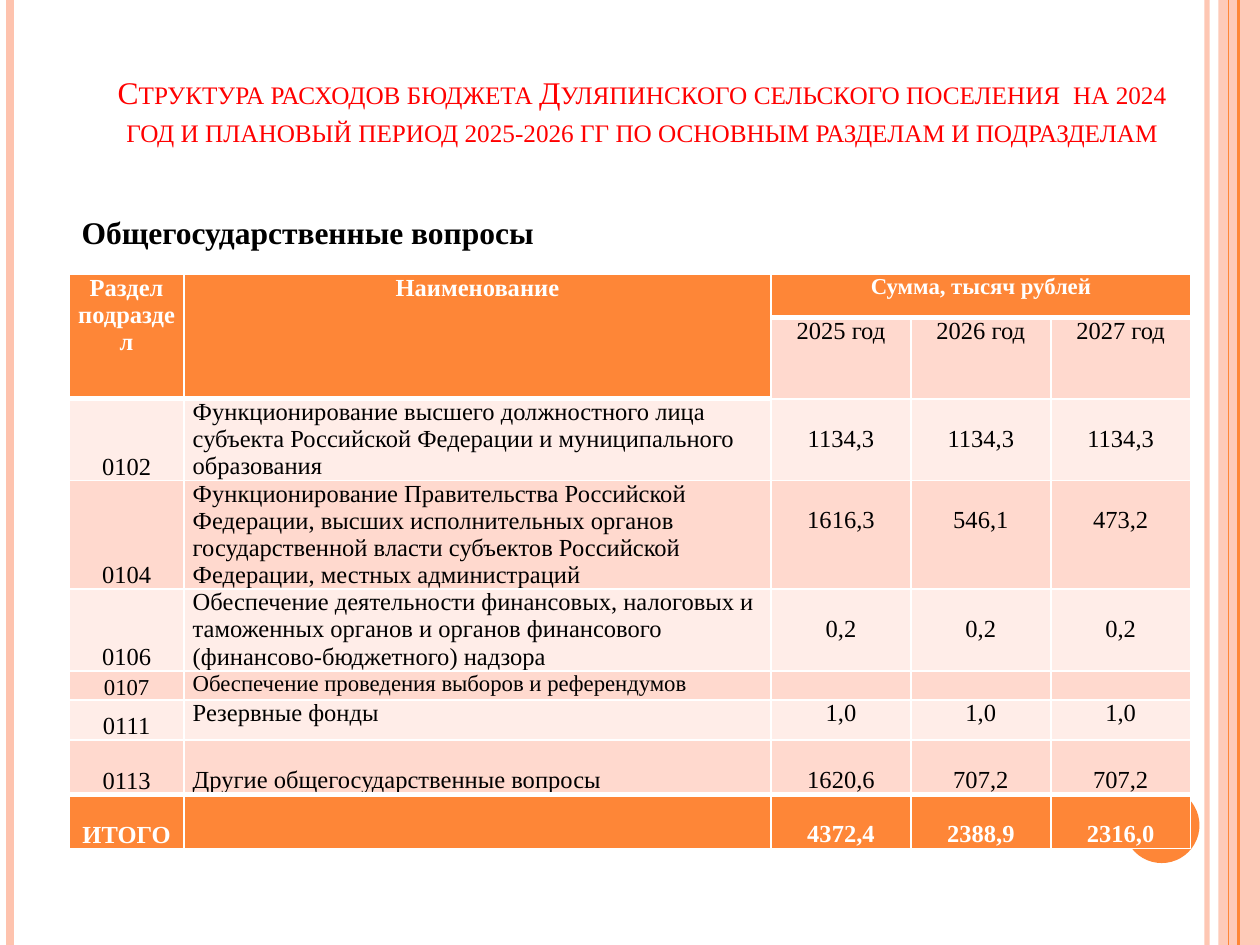
import pptx
import pptx.util
import pptx.dml.color
import pptx.enum.shapes
import pptx.enum.text
import pptx.oxml.ns
from lxml import etree

Inches, Pt = pptx.util.Inches, pptx.util.Pt
ALIGN, ANCHOR = pptx.enum.text.PP_ALIGN, pptx.enum.text.MSO_ANCHOR
SHAPE = pptx.enum.shapes.MSO_SHAPE
qn = pptx.oxml.ns.qn

THEME = {
    "font": "Times New Roman", "title": 18, "cell": 14, "small": 13,
    "orange": "FE8637", "peach": "FEC3AE", "dark_band": "FFD9CE", "light_band": "FFEDE8",
    "red": "FF0000", "black": "000000", "white": "FFFFFF",
}

TITLE = ("Структура расходов бюджета Дуляпинского сельского поселения  на 2024 год "
         "и плановый период 2025-2026 гг по основным разделам и подразделам")
SUBTITLE = "Общегосударственные вопросы"
ROWS = [
    ("Раздел подраздел", "Наименование", "Сумма, тысяч рублей", "", ""),
    ("", "", "2025 год", "2026 год", "2027 год"),
    ("0102", "Функционирование высшего должностного лица субъекта Российской Федерации "
     "и муниципального образования", "1134,3", "1134,3", "1134,3"),
    ("0104", "Функционирование Правительства Российской Федерации, высших исполнительных "
     "органов государственной власти субъектов Российской Федерации, местных администраций",
     "1616,3", "546,1", "473,2"),
    ("0106", "Обеспечение деятельности финансовых, налоговых и таможенных органов и органов "
     "финансового (финансово-бюджетного) надзора", "0,2", "0,2", "0,2"),
    ("0107", "Обеспечение проведения выборов и референдумов", "", "", ""),
    ("0111", "Резервные фонды", "1,0", "1,0", "1,0"),
    ("0113", "Другие общегосударственные вопросы", "1620,6", "707,2", "707,2"),
    ("ИТОГО", "", "4372,4", "2388,9", "2316,0"),
]
COLUMN_WIDTHS = [0.91, 4.66, 1.11, 1.11, 1.11]
ROW_HEIGHTS = [0.34, 0.63, 0.65, 0.86, 0.65, 0.23, 0.32, 0.43, 0.43]
MERGES = [((0, 0), (1, 0)), ((0, 1), (1, 1)), ((0, 2), (0, 4))]
TOTAL_ROW = len(ROWS) - 1
LOWERED_ROWS = {2, 3, 4, 7, 8}  # values sit one line below the cell top
LINE_DROP = 0.21
SMALL_CELLS = {(0, 2)} | {(5, column) for column in range(5)}

# x, width in points, colour, opacity in percent
RULES = [(9.58, 3, "peach", 93), (0.08, 4.5, "peach", 100),
         (9.83, 1.5, "orange", 100), (9.75, 0.75, "orange", 100)]


def color(name):
    return pptx.dml.color.RGBColor.from_string(THEME[name])


def set_opacity(parent, percent):
    for fill_color in parent.iter(qn("a:srgbClr")):
        etree.SubElement(fill_color, qn("a:alpha"), val=str(percent * 1000))


def add_rule(page, x, width, name, opacity):
    line = page.shapes.add_connector(pptx.enum.shapes.MSO_CONNECTOR.STRAIGHT,
                                     Inches(x), 0, Inches(x), Inches(7.5))
    line.line.color.rgb = color(name)
    line.line.width = Pt(width)
    properties = line._element.spPr
    if opacity < 100:
        set_opacity(properties, opacity)
    etree.SubElement(properties, qn("a:effectLst"))


def add_solid(page, kind, name, left, top, width, height):
    shape = page.shapes.add_shape(kind, Inches(left), Inches(top), Inches(width), Inches(height))
    shape.shadow.inherit = False
    shape.fill.solid()
    shape.fill.fore_color.rgb = color(name)
    shape.line.fill.background()
    return shape


def write(para, text, size, name, bold=False, align=ALIGN.LEFT):
    para.alignment = align
    span = para.add_run()
    span.text = text
    span.font.name = THEME["font"]
    span.font.size = Pt(size)
    span.font.bold = bold
    span.font.color.rgb = color(name)
    return span


def edge_weight(edge, column):
    """Points of the horizontal border above row number edge."""
    heavy = edge in (1, TOTAL_ROW) or (edge == 2 and column < 2)
    return 3 if heavy else 1


def set_borders(cell, row, column):
    weights = {"a:lnL": 1, "a:lnR": 1,
               "a:lnT": edge_weight(row, column), "a:lnB": edge_weight(row + 1, column)}
    properties = cell._tc.get_or_add_tcPr()
    for tag, weight in weights.items():
        line = etree.SubElement(properties, qn(tag), w=str(Pt(weight)))
        fill = etree.SubElement(line, qn("a:solidFill"))
        etree.SubElement(fill, qn("a:srgbClr"), val=THEME["white"])


def format_cell(cell, row, column, text):
    strong = row == TOTAL_ROW or row == 0 or (row == 1 and column < 2)
    band = "light_band" if row % 2 == 0 else "dark_band"
    set_borders(cell, row, column)
    cell.fill.solid()
    cell.fill.fore_color.rgb = color("orange" if strong else band)
    cell.margin_left = cell.margin_right = Inches(0.07)
    lowered = (column >= 2 and row in LOWERED_ROWS) or (row, column) == (7, 1)
    cell.margin_top = Inches(LINE_DROP if lowered else 0)
    cell.margin_bottom = 0
    cell.vertical_anchor = ANCHOR.BOTTOM if column == 0 and row > 1 else ANCHOR.TOP
    size = THEME["small" if (row, column) in SMALL_CELLS else "cell"]
    para = cell.text_frame.paragraphs[0]
    if text:
        align = ALIGN.LEFT if column == 1 and row > 0 else ALIGN.CENTER
        write(para, text, size, "white" if strong else "black", strong, align)
    else:
        etree.SubElement(para._p, qn("a:endParaRPr"), sz=str(size * 100))


def add_budget_table(page):
    frame = page.shapes.add_table(len(ROWS), len(COLUMN_WIDTHS), Inches(0.55), Inches(2.18),
                                  Inches(sum(COLUMN_WIDTHS)), Inches(sum(ROW_HEIGHTS)))
    table = frame.table
    table.first_row = table.horz_banding = False
    for column, width in zip(table.columns, COLUMN_WIDTHS):
        column.width = Inches(width)
    for row, height in zip(table.rows, ROW_HEIGHTS):
        row.height = Inches(height)
    for row, texts in enumerate(ROWS):
        for column, text in enumerate(texts):
            format_cell(table.cell(row, column), row, column, text)
    for first, last in MERGES:
        table.cell(*first).merge(table.cell(*last))


def add_title(page):
    title = page.shapes.title
    title.left, title.top = Inches(0.62), Inches(0.55)
    title.width, title.height = Inches(8.95), Inches(0.68)
    frame = title.text_frame
    frame.auto_size = pptx.enum.text.MSO_AUTO_SIZE.NONE
    frame.word_wrap = True
    frame.vertical_anchor = ANCHOR.BOTTOM
    span = write(frame.paragraphs[0], TITLE, THEME["title"], "red", align=ALIGN.CENTER)
    span.font._element.set("cap", "small")


def add_subtitle(page):
    box = page.shapes.add_textbox(Inches(0.55), Inches(1.64), Inches(3.83), Inches(0.4))
    box.text_frame.word_wrap = False
    write(box.text_frame.paragraphs[0], SUBTITLE, THEME["title"], "black", bold=True)


def main():
    deck = pptx.Presentation()
    deck.slide_width, deck.slide_height = Inches(10), Inches(7.5)
    page = deck.slides.add_slide(deck.slide_layouts[5])
    side_band = add_solid(page, SHAPE.RECTANGLE, "peach", 9.67, 0, 0.33, 7.5)
    set_opacity(side_band._element.spPr, 87)
    for rule in RULES:
        add_rule(page, *rule)
    add_solid(page, SHAPE.OVAL, "orange", 8.92, 6.25, 0.6, 0.6)
    add_title(page)
    add_budget_table(page)
    add_subtitle(page)
    deck.save("out.pptx")


if __name__ == "__main__":
    main()
